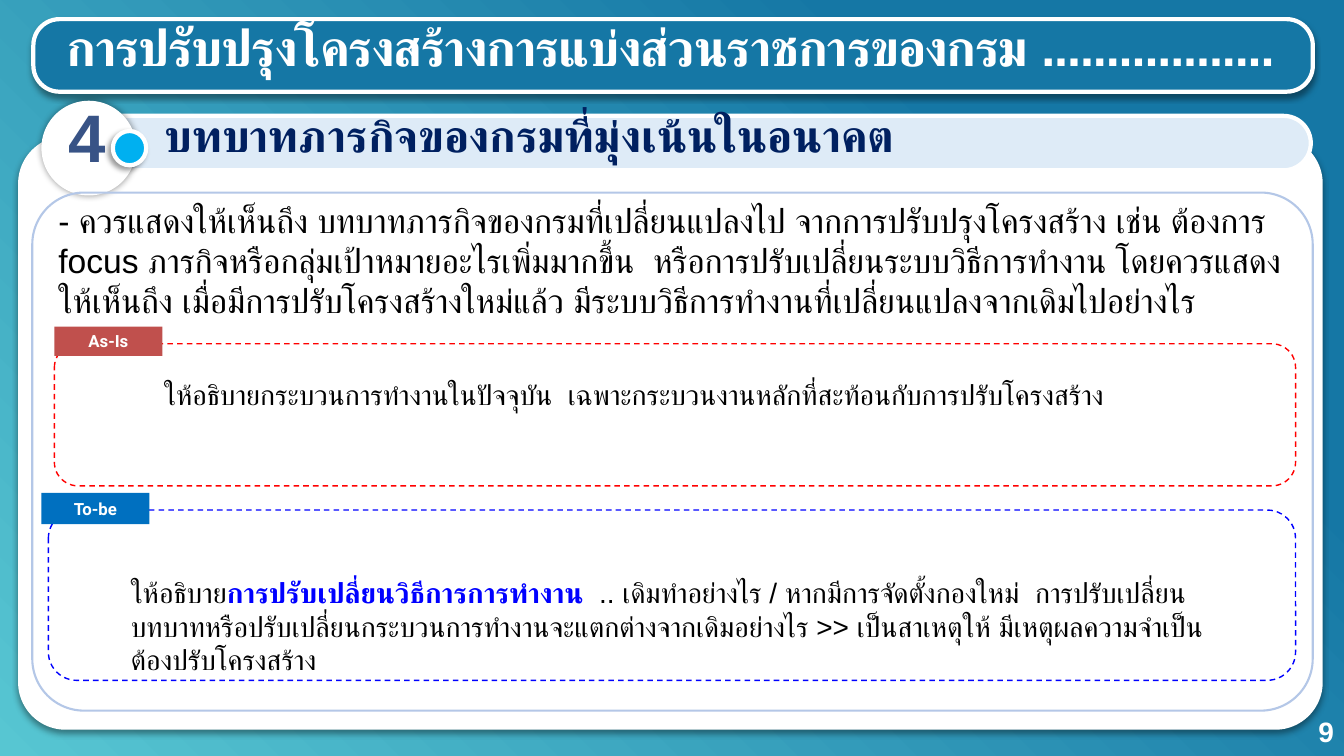
from lxml.etree import SubElement
from pptx import Presentation
from pptx.dml.color import RGBColor
from pptx.enum.dml import MSO_LINE_DASH_STYLE as Dash
from pptx.enum.shapes import MSO_SHAPE as Preset
from pptx.enum.text import MSO_ANCHOR as Anchor, MSO_AUTO_SIZE as AutoSize, PP_ALIGN as Align
from pptx.oxml.ns import qn
from pptx.util import Inches, Pt

WIDTH, HEIGHT = Inches(13.33), Inches(7.5)

WHITE = RGBColor(0xFF, 0xFF, 0xFF)
BLACK = RGBColor(0x00, 0x00, 0x00)
TEAL = RGBColor(0x57, 0xC6, 0xD2)
OCEAN = RGBColor(0x15, 0x77, 0xA5)
PALE_BLUE = RGBColor(0xDE, 0xEB, 0xF7)
FRAME_BLUE = RGBColor(0xB4, 0xC7, 0xE7)
SKY = RGBColor(0x00, 0xB0, 0xF0)
NAVY = RGBColor(0x00, 0x20, 0x60)
SLATE = RGBColor(0x38, 0x53, 0x86)
RED = RGBColor(0xFF, 0x00, 0x00)
BRICK = RGBColor(0xC0, 0x50, 0x4D)
BLUE = RGBColor(0x00, 0x00, 0xFF)
TAG_BLUE = RGBColor(0x00, 0x70, 0xC0)

STAGE_RIGHT = 96.4
TAG_WIDTH = 8.03
TAG_RISE = 2.27

TITLE = "การปรับปรุงโครงสร้างการแบ่งส่วนราชการของกรม .................."
HEADING = "บทบาทภารกิจของกรมที่มุ่งเน้นในอนาคต"
INTRO = (
    "- ควรแสดงให้เห็นถึง บทบาทภารกิจของกรมที่เปลี่ยนแปลงไป จากการปรับปรุงโครงสร้าง เช่น ต้องการ "
    "focus ภารกิจหรือกลุ่มเป้าหมายอะไรเพิ่มมากขึ้น  หรือการปรับเปลี่ยนระบบวิธีการทำงาน "
    "โดยควรแสดงให้เห็นถึง เมื่อมีการปรับโครงสร้างใหม่แล้ว "
    "มีระบบวิธีการทำงานที่เปลี่ยนแปลงจากเดิมไปอย่างไร"
)
AS_IS = "ให้อธิบายกระบวนการทำงานในปัจจุบัน  เฉพาะกระบวนงานหลักที่สะท้อนกับการปรับโครงสร้าง"
TO_BE = [
    ("ให้อธิบาย", BLACK, False),
    ("การปรับเปลี่ยนวิธีการการทำงาน  ", BLUE, True),
    (
        ".. เดิมทำอย่างไร / หากมีการจัดตั้งกองใหม่  "
        "การปรับเปลี่ยนบทบาทหรือปรับเปลี่ยนกระบวนการทำงานจะแตกต่างจากเดิมอย่างไร "
        ">> เป็นสาเหตุให้ มีเหตุผลความจำเป็นต้องปรับโครงสร้าง",
        BLACK,
        False,
    ),
]


def place(left, top, width, height):
    columns, rows = WIDTH / 100, HEIGHT / 100
    return int(left * columns), int(top * rows), int(width * columns), int(height * rows)


def add_shadow(shape, blur, distance, angle):
    effects = shape._element.spPr.find(qn("a:effectLst"))
    shadow = SubElement(
        effects, qn("a:outerShdw"), blurRad=str(Pt(blur)), dist=str(Pt(distance)),
        dir=str(angle * 60000), algn="ctr", rotWithShape="0",
    )
    color = SubElement(shadow, qn("a:srgbClr"), val="000000")
    SubElement(color, qn("a:alpha"), val="40000")


def add_panel(slide, preset, box, fill=None, line=None, line_width=3, corner=None,
              dash=None, shadow=None):
    shape = slide.shapes.add_shape(preset, *place(*box))
    shape.shadow.inherit = False
    if fill is None:
        shape.fill.background()
    else:
        shape.fill.solid()
        shape.fill.fore_color.rgb = fill
    if line is None:
        shape.line.fill.background()
    else:
        shape.line.color.rgb = line
        shape.line.width = Pt(line_width)
        if dash is not None:
            shape.line.dash_style = dash
    if corner is not None:
        shape.adjustments[0] = corner
    if shadow is not None:
        add_shadow(shape, *shadow)
    return shape


def write(paragraph, runs, size, font_name="Arial", spacing=None):
    for text, color, bold in runs:
        run = paragraph.add_run()
        run.text = text
        run.font.size = Pt(size)
        run.font.bold = bold
        run.font.color.rgb = color
        run.font.name = font_name
        properties = run._r.get_or_add_rPr()
        SubElement(properties, qn("a:cs"), typeface=font_name)
        if spacing is not None:
            properties.set("spc", str(int(spacing * 100)))


def add_text(slide, box, runs, size, align=Align.LEFT, line_height=None, spacing=None,
             grow=True):
    frame = slide.shapes.add_textbox(*place(*box)).text_frame
    frame.word_wrap = True
    frame.auto_size = AutoSize.SHAPE_TO_FIT_TEXT if grow else AutoSize.NONE
    paragraph = frame.paragraphs[0]
    paragraph.alignment = align
    if line_height is not None:
        paragraph.line_spacing = Pt(line_height)
    write(paragraph, runs, size, spacing=spacing)


def add_stage(slide, left, top, height, line, label, tag_left, tag_height, tag_fill):
    add_panel(slide, Preset.ROUNDED_RECTANGLE, (left, top, STAGE_RIGHT - left, height),
              line=line, line_width=1, dash=Dash.DASH)
    tag = add_panel(slide, Preset.RECTANGLE,
                    (tag_left, top - TAG_RISE, TAG_WIDTH, tag_height), fill=tag_fill)
    frame = tag.text_frame
    frame.vertical_anchor = Anchor.MIDDLE
    paragraph = frame.paragraphs[0]
    paragraph.alignment = Align.CENTER
    write(paragraph, [(label, WHITE, True)], 12, "Roboto")


def paint_background(slide):
    fill = slide.background.fill
    fill.gradient()
    fill.gradient_angle = 45
    for stop, color, position in zip(fill.gradient_stops, (TEAL, OCEAN), (0, 0.76)):
        stop.color.rgb = color
        stop.position = position


def add_backdrop(slide):
    rounded, ellipse = Preset.ROUNDED_RECTANGLE, Preset.OVAL
    add_panel(slide, rounded, (2.48, 2.53, 95.2, 9.6), OCEAN, WHITE,
              corner=0.36, shadow=(4, 3, 90))
    add_panel(slide, rounded, (1.35, 18, 97.07, 78.53), WHITE,
              corner=0.08, shadow=(4, 3, 90))
    add_panel(slide, rounded, (5.03, 15.33, 92.5, 7.2), PALE_BLUE, WHITE, corner=0.5)
    add_panel(slide, ellipse, (3.08, 13.33, 7.05, 12.53), WHITE, shadow=(5, 0, 0))
    add_panel(slide, ellipse, (8.4, 17.33, 2.48, 4.53), SKY, WHITE, shadow=(4, 3, 135))


def main():
    presentation = Presentation()
    presentation.slide_width, presentation.slide_height = WIDTH, HEIGHT
    slide = presentation.slides.add_slide(presentation.slide_layouts[6])

    paint_background(slide)
    add_backdrop(slide)
    add_text(slide, (77.5, 93.87, 22.5, 5.33), [("9", WHITE, True)], 20, Align.RIGHT,
             grow=False)
    add_text(slide, (4.2, 4.8, 92.2, 6.67), [(TITLE, WHITE, True)], 36,
             line_height=25, spacing=-0.8)
    add_text(slide, (3.08, 12, 6.75, 12.13), [("4", SLATE, True)], 48, Align.CENTER)
    add_text(slide, (11.48, 13.6, 77.64, 8.53), [(HEADING, NAVY, True)], 32)

    add_panel(slide, Preset.ROUNDED_RECTANGLE, (2.4, 25.47, 95.27, 68.53),
              line=FRAME_BLUE, line_width=1.5, corner=0.1)
    add_text(slide, (3.6, 25.73, 94.37, 17.47), [(INTRO, BLACK, False)], 24)

    add_stage(slide, 3.6, 67.47, 22.53, BLUE, "To-be", 3.08, 4.13, TAG_BLUE)
    add_stage(slide, 4.05, 45.47, 18.8, RED, "As-Is", 4.05, 3.87, BRICK)
    add_text(slide, (11.48, 49.33, 75.47, 5.87), [(AS_IS, BLACK, False)], 20)
    add_text(slide, (9, 75.47, 81.77, 10.27), TO_BE, 20)

    presentation.save("out.pptx")


if __name__ == "__main__":
    main()
